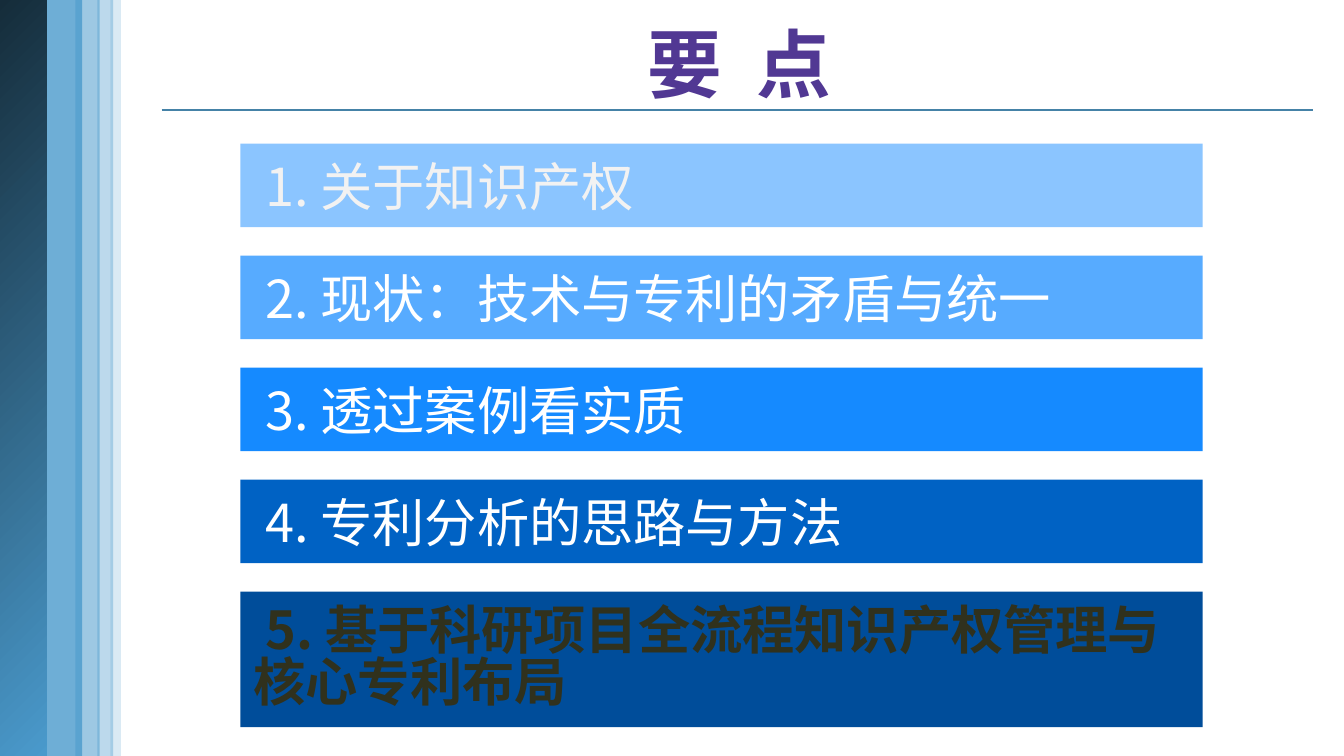
from pptx import Presentation
from pptx.util import Pt
from pptx.dml.color import RGBColor
from pptx.enum.shapes import MSO_SHAPE, MSO_CONNECTOR
from pptx.enum.text import MSO_ANCHOR, PP_ALIGN
from pptx.oxml.ns import qn
from lxml.etree import SubElement

FONT = "Noto Sans CJK SC"
COLORS = {
    "sky": "4A9ACC", "night": "152C3A", "rule": "4582A7", "title": "513893",
    "white": "FFFFFF", "pale": "F2F2F2", "dark": "30311D",
    "bar1": "8BC5FF", "bar2": "57ABFF", "bar3": "158AFF",
    "bar4": "0062C4", "bar5": "004D9A",
}


def color(name):
    return RGBColor.from_string(COLORS[name])


def style(para, size, name, bold):
    for run in para.runs:
        run.font.size = Pt(size)
        run.font.bold = bold
        run.font.color.rgb = color(name)
        run.font.name = FONT
        SubElement(run.font._element, qn("a:ea")).set("typeface", FONT)


deck = Presentation()
deck.slide_width, deck.slide_height = Pt(720), Pt(405)
slide = deck.slides.add_slide(deck.slide_layouts[5])
shapes = slide.shapes

# Left strips: left, width, opacity in percent (None for the gradient)
strips = [(21.8, 22.2, 80), (0, 25.2, None), (59.2, 5.6, 20),
          (40.4, 13, 54), (52.2, 8.4, 37)]
for left, width, alpha in strips:
    strip = shapes.add_shape(MSO_SHAPE.RECTANGLE, Pt(left), 0, Pt(width), Pt(405))
    strip.shadow.inherit = False
    strip.line.fill.background()
    if alpha is None:
        strip.fill.gradient()
        strip.fill.gradient_angle = 315
        for stop, name, place in zip(strip.fill.gradient_stops, ("night", "sky"), (0, 1)):
            stop.color.rgb = color(name)
            stop.position = place
    else:
        strip.fill.solid()
        strip.fill.fore_color.rgb = color("sky")
        tint = strip._element.spPr.find(".//" + qn("a:srgbClr"))
        SubElement(tint, qn("a:alpha")).set("val", str(alpha * 1000))

# Title and the rule below it
title = shapes.title
title.left, title.top, title.width, title.height = Pt(82.8), Pt(3.6), Pt(626.4), Pt(59.8)
title.text_frame.text = "要  点"
title.text_frame.vertical_anchor = MSO_ANCHOR.MIDDLE
title.text_frame.paragraphs[0].alignment = PP_ALIGN.CENTER
style(title.text_frame.paragraphs[0], 40, "title", True)

rule = shapes.add_connector(MSO_CONNECTOR.STRAIGHT, Pt(86.6), Pt(59), Pt(703.4), Pt(59))
rule.line.color.rgb = color("rule")
rule.line.width = Pt(1)
SubElement(rule._element.spPr, qn("a:effectLst"))

# Agenda bars, one every 60 points
items = [
    (" 1. 关于知识产权", "pale"),
    (" 2. 现状：技术与专利的矛盾与统一", "white"),
    (" 3. 透过案例看实质", "white"),
    (" 4. 专利分析的思路与方法", "white"),
    (" 5. 基于科研项目全流程知识产权管理与核心专利布局", "dark"),
]
for row, (text, ink) in enumerate(items):
    last = row == len(items) - 1
    bar = shapes.add_shape(MSO_SHAPE.RECTANGLE, Pt(128.8), Pt(77 + 60 * row),
                           Pt(515.5), Pt(72.6 if last else 44.8))
    bar.shadow.inherit = False
    bar.line.fill.background()
    bar.fill.solid()
    bar.fill.fore_color.rgb = color(f"bar{row + 1}")
    frame = bar.text_frame
    frame.text = text
    frame.word_wrap = True
    frame.vertical_anchor = MSO_ANCHOR.MIDDLE
    para = frame.paragraphs[0]
    para.alignment = PP_ALIGN.LEFT
    if last:
        para.line_spacing = 0.83
    style(para, 28, ink, last)

deck.save("out.pptx")
